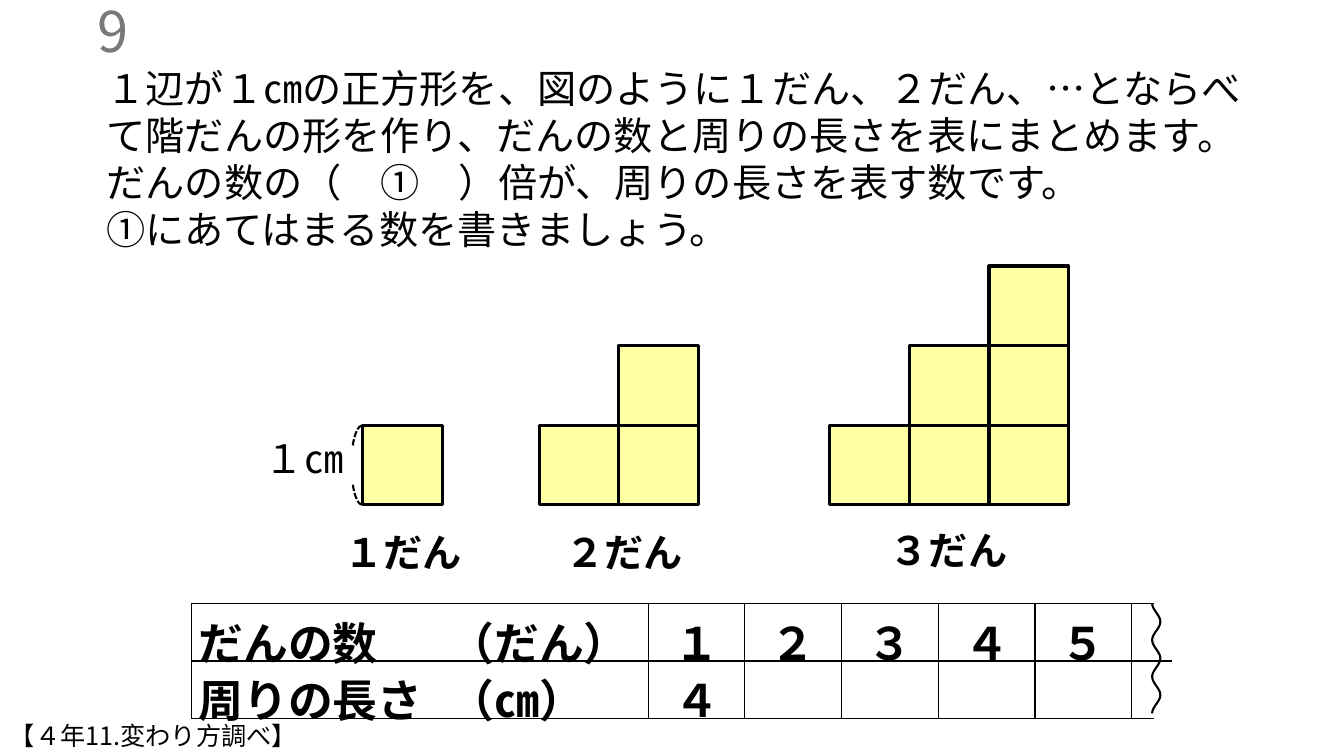
import math

import pptx
import pptx.dml.color
import pptx.enum.dml
import pptx.enum.shapes
import pptx.enum.text
import pptx.oxml
import pptx.oxml.ns
import pptx.util

Pt = pptx.util.Pt
ALIGN = pptx.enum.text.PP_ALIGN
SHAPE = pptx.enum.shapes.MSO_SHAPE
FONT = "Noto Sans CJK JP"
BLACK, GREY, YELLOW = "000000", "797979", "FFFFA3"
SQUARE = 56.9
GROUND = 360.7
TABLE_LEFT, TABLE_TOP, ROW_HEIGHT = 136.8, 431, 41.2
COLUMNS = [179.3, 146.9] + [69.1] * 5 + [15.8, 5]
ROWS = [["だんの数", "（だん）", "１", "２", "３", "４", "５", "", ""],
        ["周りの長さ", "（㎝）", "４", "", "", "", "", "", ""]]


def colour(value):
    return pptx.dml.color.RGBColor.from_string(value)


def style(paragraph, size, ink=BLACK, bold=False, align=ALIGN.LEFT):
    paragraph.alignment = align
    for run in paragraph.runs:
        run.font.size = Pt(size)
        run.font.name = FONT
        run.font.bold = bold
        run.font.color.rgb = colour(ink)
        east_asian = pptx.oxml.parse_xml(
            f'<a:ea {pptx.oxml.ns.nsdecls("a")} typeface="{FONT}"/>')
        run.font._element.find(pptx.oxml.ns.qn("a:latin")).addnext(east_asian)


def add_text(slide, text, left, top, width, height, size,
             anchor=pptx.enum.text.MSO_ANCHOR.TOP, **look):
    box = slide.shapes.add_textbox(Pt(left), Pt(top), Pt(width), Pt(height))
    frame = box.text_frame
    frame.word_wrap = True
    frame.vertical_anchor = anchor
    frame.text = text
    for paragraph in frame.paragraphs:
        style(paragraph, size, **look)


def outline(shape, weight):
    shape.shadow.inherit = False
    shape.line.color.rgb = colour(BLACK)
    shape.line.width = Pt(weight)


def add_stairs(slide, left, steps):
    """Draw a staircase of unit squares rising to the right."""
    for column in range(steps):
        for level in range(column + 1):
            square = slide.shapes.add_shape(
                SHAPE.RECTANGLE, Pt(left + column * SQUARE),
                Pt(GROUND - (level + 1) * SQUARE), Pt(SQUARE), Pt(SQUARE))
            square.fill.solid()
            square.fill.fore_color.rgb = colour(YELLOW)
            outline(square, 2.25)


def add_length_mark(slide, flipped):
    """Draw one half of the dashed bracket beside the first square."""
    arc = slide.shapes.add_shape(SHAPE.ARC, Pt(230.4), Pt(324.3), Pt(SQUARE), Pt(15.8))
    arc.rotation = 270
    # Angles are stored in 60000ths of a degree, adjustments in 100000ths.
    arc.adjustments[0] = 334 * 0.6
    arc.adjustments[1] = 0
    if flipped:
        arc._element.spPr.xfrm.set("flipH", "1")
    arc.fill.background()
    outline(arc, 1.5)
    arc.line.dash_style = pptx.enum.dml.MSO_LINE.SQUARE_DOT


def set_borders(cell, sides):
    """Draw the named sides (L, R, T, B) and hide the others."""
    properties = cell._tc.get_or_add_tcPr()
    for position, side in enumerate("LRTB"):
        fill = (f'<a:solidFill><a:srgbClr val="{BLACK}"/></a:solidFill>'
                if side in sides else "<a:noFill/>")
        properties.insert(position, pptx.oxml.parse_xml(
            f'<a:ln{side} {pptx.oxml.ns.nsdecls("a")} w="{Pt(1)}">{fill}</a:ln{side}>'))


def cell_sides(row, column):
    last = len(COLUMNS) - 1
    if column == last:
        return "B" if row == 0 else "T"
    return {0: "LTB", 1: "RTB", last - 1: "LTB"}.get(column, "LRTB")


def add_perimeter_table(slide):
    table = slide.shapes.add_table(
        len(ROWS), len(COLUMNS), Pt(TABLE_LEFT), Pt(TABLE_TOP),
        Pt(sum(COLUMNS)), Pt(ROW_HEIGHT * len(ROWS))).table
    table.first_row = table.horz_banding = False
    for column, width in zip(table.columns, COLUMNS):
        column.width = Pt(width)
    for r, texts in enumerate(ROWS):
        table.rows[r].height = Pt(ROW_HEIGHT)
        for c, text in enumerate(texts):
            cell = table.cell(r, c)
            cell.margin_left = cell.margin_right = Pt(5)
            cell.margin_top = cell.margin_bottom = 0
            cell.fill.background()
            set_borders(cell, cell_sides(r, c))
            cell.text = text
            paragraph = cell.text_frame.paragraphs[0]
            paragraph.line_spacing = 1.07
            paragraph.space_after = Pt(8)
            style(paragraph, 32, bold=True, align=ALIGN.LEFT if c < 2 else ALIGN.CENTER)


def add_torn_edge(slide):
    """Draw the wavy line that shows the table continues."""
    left, height, waves, steps = 823, 78.5, 3, 72
    points = [(Pt(left + 2.9 * (1 - math.cos(2 * math.pi * waves * i / steps))),
               Pt(TABLE_TOP + height * i / steps)) for i in range(steps + 1)]
    builder = slide.shapes.build_freeform(*points[0])
    builder.add_line_segments(points[1:], close=False)
    edge = builder.convert_to_shape()
    edge.fill.background()
    outline(edge, 1.5)


def main():
    deck = pptx.Presentation()
    deck.slide_width, deck.slide_height = Pt(960), Pt(540)
    slide = deck.slides.add_slide(deck.slide_layouts[6])
    add_text(slide, "１辺が１㎝の正方形を、図のように１だん、２だん、…とならべて階だんの形を作り、"
             "だんの数と周りの長さを表にまとめます。\n"
             "だんの数の（\u3000①\u3000）倍が、周りの長さを表す数です。\n"
             "①にあてはまる数を書きましょう。".replace("\\u3000", "　"),
             69.1, 42.5, 830.2, 143.3, 28)
    add_text(slide, "9", -117.4, 7.2, 216, 28.8, 40, ink=GREY, align=ALIGN.RIGHT,
             anchor=pptx.enum.text.MSO_ANCHOR.MIDDLE)
    for steps, left in enumerate((259.2, 385.2, 592.6), start=1):
        add_stairs(slide, left, steps)
    for flipped in (False, True):
        add_length_mark(slide, flipped)
    add_text(slide, "１㎝", 182.2, 306.7, 79.2, 41, 28)
    for caption, left, top, width in (("１だん", 236.9, 373.7, 102.2),
                                      ("２だん", 393.1, 373.7, 105.1),
                                      ("３だん", 614.9, 372.2, 125.3)):
        add_text(slide, caption, left, top, width, 41, 28, bold=True, align=ALIGN.CENTER)
    add_perimeter_table(slide)
    add_torn_edge(slide)
    add_text(slide, "【４年11.変わり方調べ】", 0, 511.2, 539.3, 28.8, 18)
    deck.save("out.pptx")


if __name__ == "__main__":
    main()
